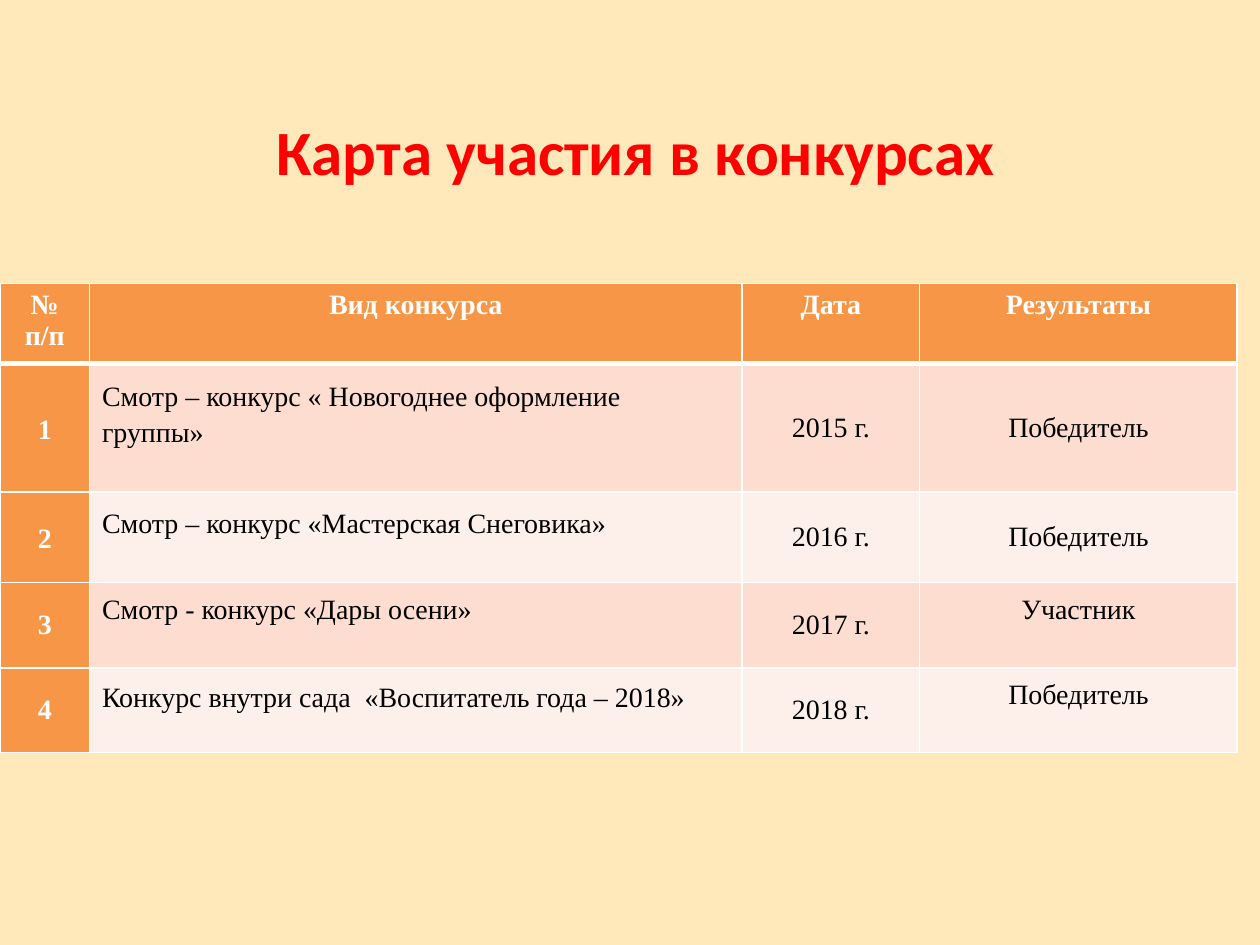
"""Build a slide with a table of contest participation."""
from lxml import etree
from pptx import Presentation
from pptx.dml.color import RGBColor
from pptx.enum import text
from pptx.oxml import ns
from pptx.util import Inches, Pt

CREAM = RGBColor(0xFF, 0xE8, 0xBA)
RED = RGBColor(0xFF, 0x00, 0x00)
ORANGE = RGBColor(0xF7, 0x96, 0x46)
PEACH = RGBColor(0xFC, 0xDD, 0xCF)
PALE = RGBColor(0xFD, 0xEF, 0xE9)
WHITE = RGBColor(0xFF, 0xFF, 0xFF)
BLACK = RGBColor(0x00, 0x00, 0x00)

ROWS = [
    ["№ п/п", "Вид конкурса", "Дата", "Результаты"],
    ["1", "Смотр – конкурс « Новогоднее оформление группы»", "2015 г.", "Победитель"],
    ["2", "Смотр – конкурс «Мастерская Снеговика»", "2016 г.", "Победитель"],
    ["3", "Смотр - конкурс «Дары осени»", "2017 г.", "Участник"],
    ["4", "Конкурс внутри сада  «Воспитатель года – 2018»", "2018 г.", "Победитель"],
]
COLUMN_WIDTHS = [0.71, 5.18, 1.41, 2.52]
ROW_HEIGHTS = [0.63, 1.02, 0.72, 0.68, 0.67]


def add_span(para, words, font_name, size, color, bold):
    span = para.add_run()
    span.text = words
    span.font.name = font_name
    span.font.size = Pt(size)
    span.font.bold = bold
    span.font.color.rgb = color


def add_border(cell, side, width):
    properties = cell._tc.get_or_add_tcPr()
    line = etree.SubElement(properties, ns.qn(f"a:{side}"), w=str(Pt(width)))
    fill = etree.SubElement(line, ns.qn("a:solidFill"))
    etree.SubElement(fill, ns.qn("a:srgbClr"), val=str(WHITE))


deck = Presentation()
deck.slide_width = Inches(10)
deck.slide_height = Inches(7.5)
page = deck.slides.add_slide(deck.slide_layouts[6])
page.background.fill.solid()
page.background.fill.fore_color.rgb = CREAM

title_box = page.shapes.add_textbox(Inches(0.28), Inches(0.84), Inches(9.53), Inches(0.71))
title_box.text_frame.word_wrap = True
title = title_box.text_frame.paragraphs[0]
title.alignment = text.PP_ALIGN.CENTER
add_span(title, "Карта участия в конкурсах", "Calibri", 36, RED, True)

table = page.shapes.add_table(
    len(ROWS), len(COLUMN_WIDTHS), Inches(0), Inches(2.25),
    Inches(sum(COLUMN_WIDTHS)), Inches(sum(ROW_HEIGHTS)),
).table
for column, width in zip(table.columns, COLUMN_WIDTHS):
    column.width = Inches(width)
for row, height in zip(table.rows, ROW_HEIGHTS):
    row.height = Inches(height)

for r, contest in enumerate(ROWS):
    for c, words in enumerate(contest):
        cell = table.cell(r, c)
        is_heading = r == 0 or c == 0
        is_contest_name = r > 0 and c == 1
        for side in ("lnL", "lnR", "lnT", "lnB"):
            thick = (r, side) in ((0, "lnB"), (1, "lnT"))
            add_border(cell, side, 3 if thick else 1)
        cell.fill.solid()
        cell.fill.fore_color.rgb = ORANGE if is_heading else PEACH if r % 2 else PALE
        cell.vertical_anchor = text.MSO_ANCHOR.MIDDLE if r else text.MSO_ANCHOR.TOP
        if is_contest_name or (r >= 3 and c == 3):
            cell.margin_bottom = Inches(0.29)
        if is_contest_name:
            cell.margin_right = Inches(0.2)
        para = cell.text_frame.paragraphs[0]
        para.alignment = text.PP_ALIGN.LEFT if is_contest_name else text.PP_ALIGN.CENTER
        if (r in (1, 2) and c < 2) or (r == 4 and c == 1):
            para.line_spacing = 1.15
        add_span(para, words, "Times New Roman", 16, WHITE if is_heading else BLACK, is_heading)

deck.save("out.pptx")
